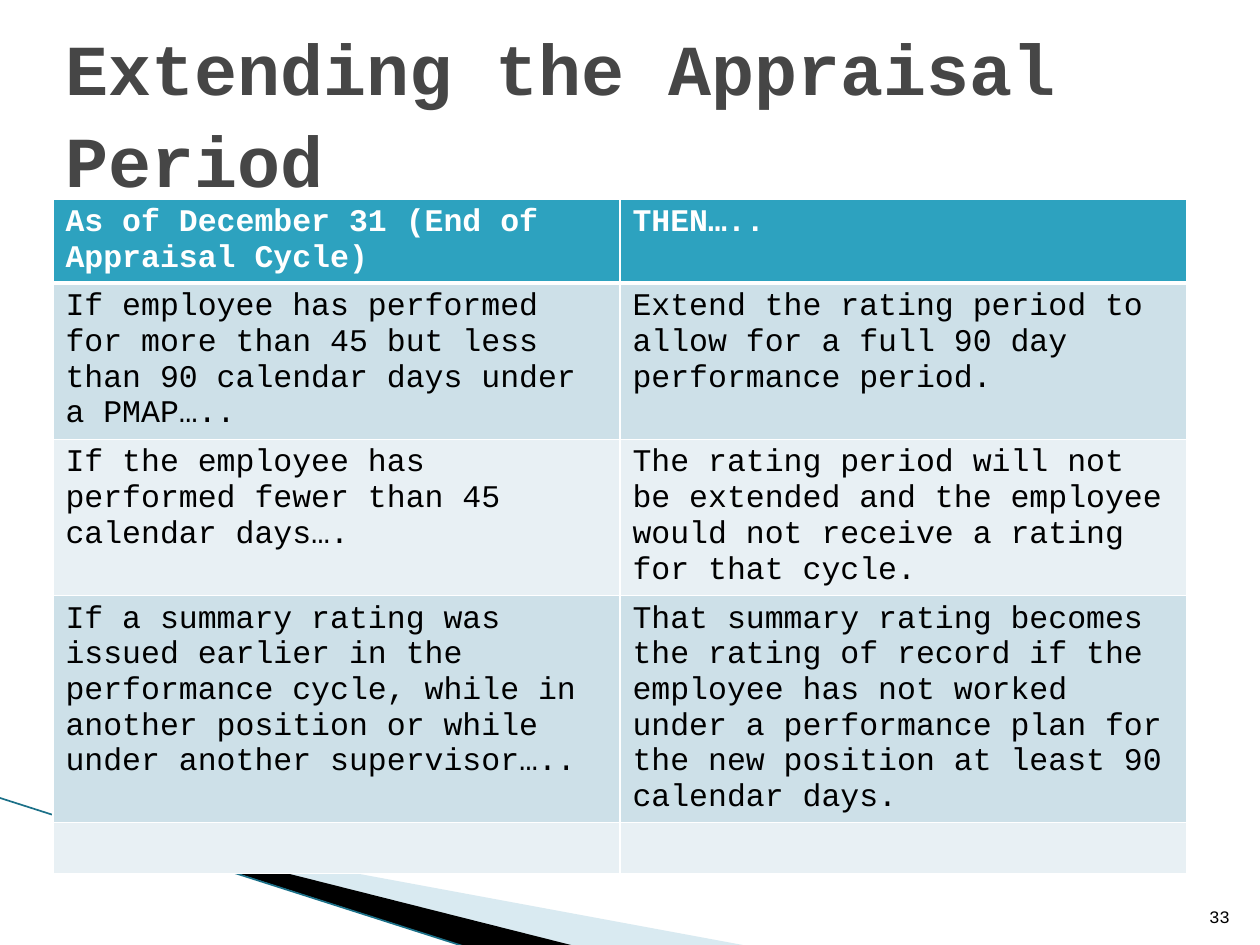
from lxml import etree
from pptx import Presentation
from pptx.dml.color import RGBColor
from pptx.enum import shapes, text
from pptx.oxml import parse_xml
from pptx.oxml.ns import nsdecls, qn
from pptx.util import Inches, Pt


def color(hex_value):
    return RGBColor.from_string(hex_value)


def add_text(paragraph, words, size, hex_value, bold=False):
    run = paragraph.add_run()
    run.text = words
    run.font.name = "Courier New"
    run.font.size = Pt(size)
    run.font.bold = bold
    run.font.color.rgb = color(hex_value)


prs = Presentation()
prs.slide_width, prs.slide_height = Inches(10), Inches(7.5)
slide = prs.slides.add_slide(prs.slide_layouts[5])

# Wedges and line in the lower left corner
wedges = [
    ("A0CBDC", 40, [(0.55, 6.51), (5.95, 7.51), (4.56, 7.51), (0.55, 6.5)]),
    ("000000", 100, [(0.53, 6.49), (4.57, 7.51), (3.72, 7.52), (0.54, 6.5)]),
]
for fill, opacity, points in wedges:
    corners = [(Inches(x), Inches(y)) for x, y in points]
    builder = slide.shapes.build_freeform(*corners[0])
    builder.add_line_segments(corners[1:], close=True)
    wedge = builder.convert_to_shape()
    wedge.shadow.inherit = False
    wedge.line.fill.background()
    wedge.fill.solid()
    wedge.fill.fore_color.rgb = color(fill)
    if opacity < 100:
        tint = wedge._element.spPr.find(".//" + qn("a:srgbClr"))
        etree.SubElement(tint, qn("a:alpha"), val=str(opacity * 1000))

edge = slide.shapes.add_connector(
    shapes.MSO_CONNECTOR.STRAIGHT,
    Inches(-0.01), Inches(6.33), Inches(3.71), Inches(7.52))
edge.line.color.rgb = color("1B7088")
edge.line.width = Pt(0.95)
etree.SubElement(edge._element.spPr, qn("a:effectLst"))

# Appraisal rules
rules = [
    ("As of December 31 (End of Appraisal Cycle)", "THEN….."),
    ("If employee has performed for more than 45 but less than 90 calendar "
     "days under a PMAP…..",
     "Extend the rating period to allow for a full 90 day performance period."),
    ("If the employee has performed fewer than 45 calendar days….",
     "The rating period will not be extended and the employee would not "
     "receive a rating for that cycle."),
    ("If a summary rating was issued earlier in the performance cycle, while "
     "in another position or while under another supervisor…..",
     "That summary rating becomes the rating of record if the employee has "
     "not worked under a performance plan for the new position at least 90 "
     "calendar days."),
    ("", ""),
]
row_heights = [0.65, 1.24, 1.24, 1.8, 0.4]
table = slide.shapes.add_table(
    len(rules), 2, Inches(0.42), Inches(1.58),
    Inches(9), Inches(sum(row_heights))).table
for column in table.columns:
    column.width = Inches(4.5)

for r, (rule, height) in enumerate(zip(rules, row_heights)):
    table.rows[r].height = Inches(height)
    header = r == 0
    fill = "2DA2BF" if header else ("E8F0F4", "CDE0E8")[r % 2]
    for c, words in enumerate(rule):
        cell = table.cell(r, c)
        borders = {"L": 1, "R": 1, "T": 3 if r == 1 else 1, "B": 3 if header else 1}
        for side, width in borders.items():
            cell._tc.get_or_add_tcPr().append(parse_xml(
                f'<a:ln{side} {nsdecls("a")} w="{Pt(width)}"><a:solidFill>'
                f'<a:srgbClr val="FFFFFF"/></a:solidFill></a:ln{side}>'))
        cell.fill.solid()
        cell.fill.fore_color.rgb = color(fill)
        if words:
            add_text(cell.text_frame.paragraphs[0], words, 18,
                     "FFFFFF" if header else "000000", header)

# Title
title = slide.shapes.title
title.left, title.top = Inches(0.42), Inches(0.25)
title.width, title.height = Inches(9), Inches(1.25)
title.text_frame.auto_size = text.MSO_AUTO_SIZE.NONE
title.text_frame.vertical_anchor = text.MSO_ANCHOR.MIDDLE
heading = title.text_frame.paragraphs[0]
heading.alignment = text.PP_ALIGN.LEFT
heading.line_spacing = 1.06
add_text(heading, "Extending the Appraisal Period", 41, "464646", True)

# Page number
number = slide.shapes.add_textbox(
    Inches(9.46), Inches(7.01), Inches(0.4), Inches(0.4)).text_frame
number.word_wrap = True
number.vertical_anchor = text.MSO_ANCHOR.BOTTOM
number.paragraphs[0].alignment = text.PP_ALIGN.RIGHT
add_text(number.paragraphs[0], "33", 10, "000000")

prs.save("out.pptx")
